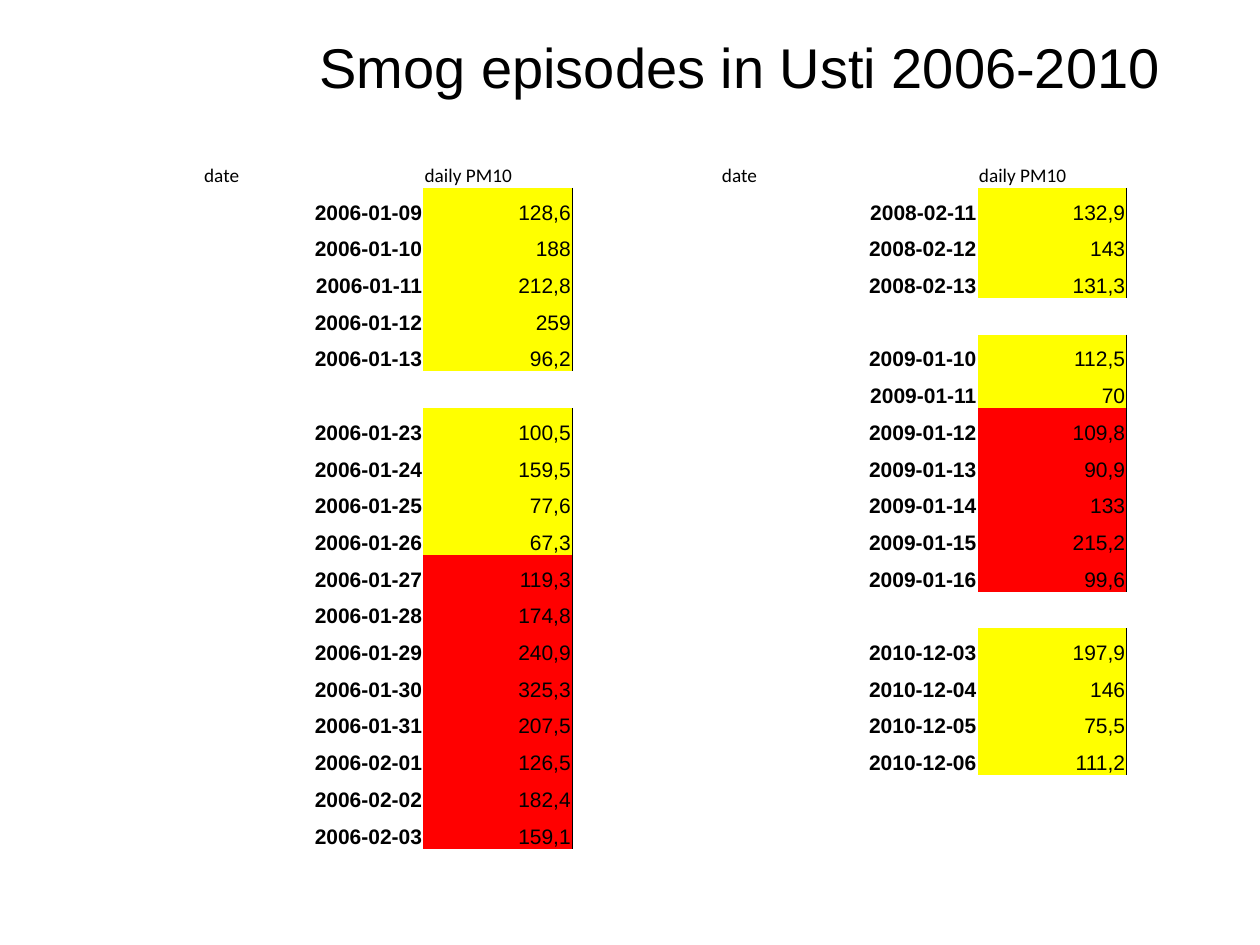
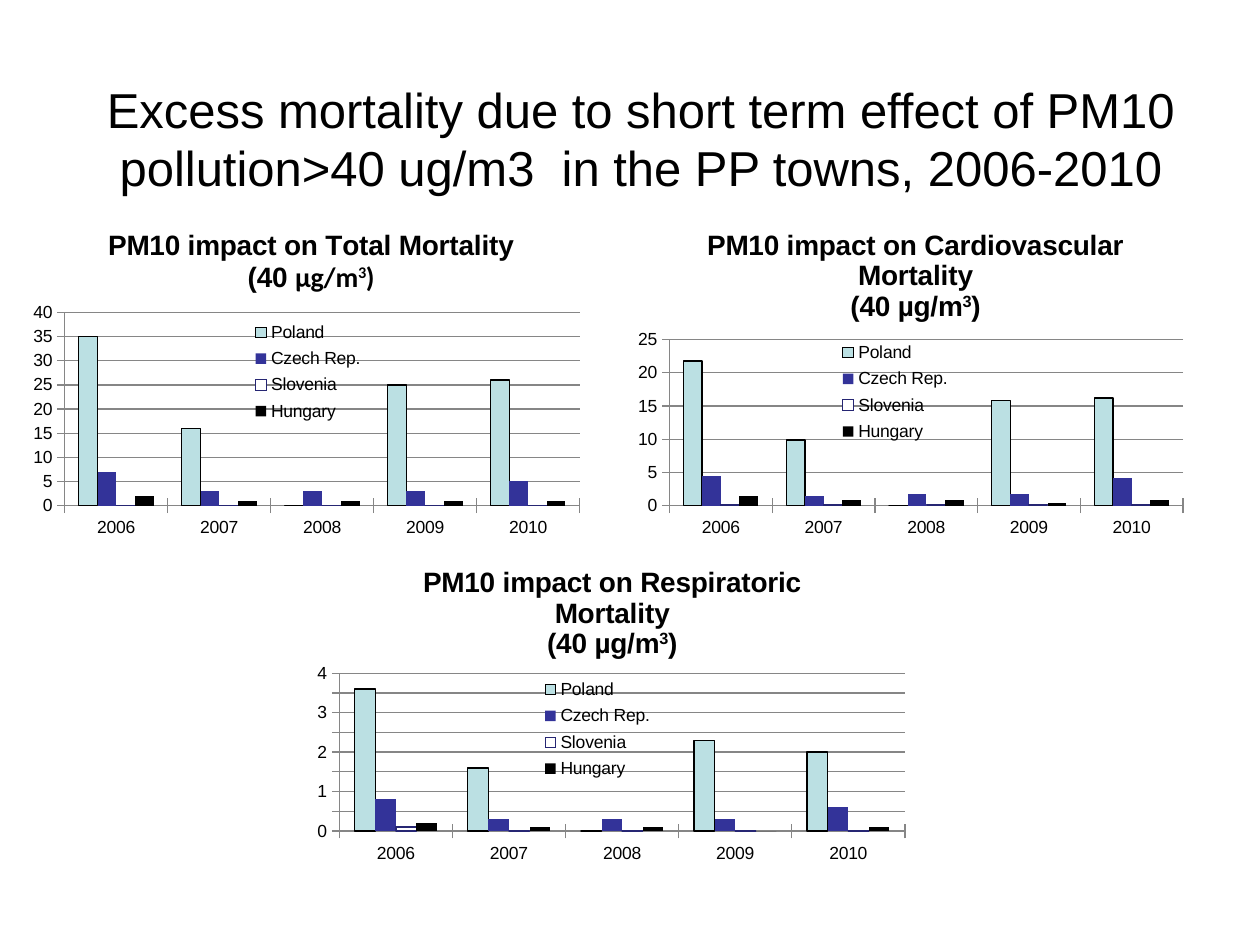
import pptx
import pptx.chart.data
import pptx.dml.color
import pptx.enum.chart
import pptx.enum.text
import pptx.oxml
import pptx.oxml.ns
import pptx.util

Inches, Pt = pptx.util.Inches, pptx.util.Pt
qn = pptx.oxml.ns.qn
ALIGN = pptx.enum.text.PP_ALIGN
ANCHOR = pptx.enum.text.MSO_ANCHOR
LEGEND = pptx.enum.chart.XL_LEGEND_POSITION

COLORS = {
    "text": "000000", "alert": "FFFF00", "alarm": "FF0000", "grid": "868686",
    "Poland": "BBE0E3", "Czech Rep.": "333399", "Slovenia": "FFFFFF", "Hungary": "000000",
    "Slovenia outline": "262673",
}
OUTLINES = {"Poland": "text", "Slovenia": "Slovenia outline"}
TITLE_SIZE = (8.83, 0.63)
NO_STYLE = "{2D5ABB26-0587-4C30-8999-92F81FD0307C}"

SMOG_TITLE = "Smog episodes in Usti 2006-2010"
HEADINGS = {0: "date", 1: "daily PM10", 3: "date", 4: "daily PM10"}
SMOG_COLUMNS = [1.75, 1.18, 1.18, 2.04, 1.18]
HEADING_HEIGHT, TABLE_HEIGHT = 0.5, 5.75
# Each half: (date column, [(first row, [(date, value, level)])])
EPISODES = {
    0: [
        ("2006-01-09", "128,6", "alert"), ("2006-01-10", "188", "alert"),
        ("2006-01-11", "212,8", "alert"), ("2006-01-12", "259", "alert"),
        ("2006-01-13", "96,2", "alert"),
        None,
        ("2006-01-23", "100,5", "alert"), ("2006-01-24", "159,5", "alert"),
        ("2006-01-25", "77,6", "alert"), ("2006-01-26", "67,3", "alert"),
        ("2006-01-27", "119,3", "alarm"), ("2006-01-28", "174,8", "alarm"),
        ("2006-01-29", "240,9", "alarm"), ("2006-01-30", "325,3", "alarm"),
        ("2006-01-31", "207,5", "alarm"), ("2006-02-01", "126,5", "alarm"),
        ("2006-02-02", "182,4", "alarm"), ("2006-02-03", "159,1", "alarm"),
    ],
    3: [
        ("2008-02-11", "132,9", "alert"), ("2008-02-12", "143", "alert"),
        ("2008-02-13", "131,3", "alert"),
        None,
        ("2009-01-10", "112,5", "alert"), ("2009-01-11", "70", "alert"),
        ("2009-01-12", "109,8", "alarm"), ("2009-01-13", "90,9", "alarm"),
        ("2009-01-14", "133", "alarm"), ("2009-01-15", "215,2", "alarm"),
        ("2009-01-16", "99,6", "alarm"),
        None,
        ("2010-12-03", "197,9", "alert"), ("2010-12-04", "146", "alert"),
        ("2010-12-05", "75,5", "alert"), ("2010-12-06", "111,2", "alert"),
    ],
}

MORTALITY_TITLE = ("Excess mortality due to short term effect of PM10 "
                   "pollution>40 ug/m3  in the PP towns, 2006-2010")
YEARS = ["2006", "2007", "2008", "2009", "2010"]
IMPACTS = [
    {
        "title": "PM10 impact on Total Mortality", "unit_font": "Calibri",
        "box": (0.2, 1.62, 4.49, 2.69), "top": 40, "step": 5, "legend_side": LEGEND.LEFT,
        "title_at": (0.14, 0.06), "legend_at": (0.4, 0.33, 0.2, 0.33),
        "plot_at": (0.07, 0.32, 0.91, 0.57),
        "deaths": {"Poland": [35, 16, 0, 25, 26], "Czech Rep.": [7, 3, 3, 3, 5],
                   "Slovenia": [0, 0, 0, 0, 0], "Hungary": [2, 1, 1, 1, 1]},
    },
    {
        "title": "PM10 impact on Cardiovascular Mortality", "unit_font": "Arial",
        "box": (5, 1.62, 4.48, 2.69), "top": 25, "step": 5, "legend_side": LEGEND.LEFT,
        "title_at": (0.13, 0.06), "legend_at": (0.37, 0.39, 0.2, 0.33),
        "plot_at": (0.07, 0.4, 0.91, 0.49),
        "deaths": {"Poland": [21.8, 9.9, 0, 15.8, 16.2], "Czech Rep.": [4.4, 1.5, 1.7, 1.7, 4.1],
                   "Slovenia": [0.2, 0.1, 0.1, 0.2, 0.1], "Hungary": [1.5, 0.8, 0.8, 0.4, 0.8]},
    },
    {
        "title": "PM10 impact on Respiratoric Mortality", "unit_font": "Arial",
        "box": (2.4, 4.3, 4.88, 2.61), "top": 4, "step": 0.5, "legend_side": LEGEND.RIGHT,
        "title_at": (0.19, 0.06), "legend_at": (0.38, 0.4, 0.2, 0.34),
        "plot_at": (0.06, 0.4, 0.92, 0.48),
        "deaths": {"Poland": [3.6, 1.6, 0, 2.3, 2], "Czech Rep.": [0.8, 0.3, 0.3, 0.3, 0.6],
                   "Slovenia": [0.1, 0, 0, 0, 0], "Hungary": [0.2, 0.1, 0.1, 0, 0.1]},
    },
]


def rgb(name):
    return pptx.dml.color.RGBColor.from_string(COLORS[name])


def set_font(font, size, name="Arial", bold=False):
    font.size, font.name, font.bold = Pt(size), name, bold
    font.color.rgb = rgb("text")


def titled_slide(deck, text, left, top, size, bottom_inset=0.05):
    slide = deck.slides.add_slide(deck.slide_layouts[5])
    title = slide.shapes.title
    title.left, title.top = Inches(left), Inches(top)
    title.width, title.height = map(Inches, TITLE_SIZE)
    frame = title.text_frame
    frame.text = text
    frame.auto_size = pptx.enum.text.MSO_AUTO_SIZE.NONE
    frame.vertical_anchor = ANCHOR.MIDDLE
    frame.margin_top, frame.margin_bottom = Inches(0.05), Inches(bottom_inset)
    frame.paragraphs[0].alignment = ALIGN.CENTER
    set_font(frame.paragraphs[0].font, size)
    return slide


def write(cell, text, size, name="Arial", bold=False, align=ALIGN.RIGHT):
    cell.text = text
    paragraph = cell.text_frame.paragraphs[0]
    paragraph.alignment = align
    set_font(paragraph.font, size, name, bold)


def rule_right(cell):
    line = pptx.oxml.parse_xml(
        f'<a:lnR {pptx.oxml.ns.nsdecls("a")} w="6350"><a:solidFill>'
        f'<a:srgbClr val="{COLORS["text"]}"/></a:solidFill></a:lnR>')
    cell._tc.get_or_add_tcPr().insert(0, line)


def add_episodes(slide):
    days = max(map(len, EPISODES.values()))
    frame = slide.shapes.add_table(days + 1, len(SMOG_COLUMNS), Inches(1.61), Inches(0.99),
                                   Inches(sum(SMOG_COLUMNS)), Inches(TABLE_HEIGHT))
    table = frame.table
    table.first_row = table.horz_banding = False
    table._tbl.tblPr.find(qn("a:tableStyleId")).text = NO_STYLE
    for column, width in zip(table.columns, SMOG_COLUMNS):
        column.width = Inches(width)
    for index, row in enumerate(table.rows):
        row.height = Inches((TABLE_HEIGHT - HEADING_HEIGHT) / days if index else HEADING_HEIGHT)
    for cell in table.iter_cells():
        cell.margin_left = cell.margin_right = cell.margin_top = Inches(0.01)
        cell.margin_bottom = 0
        cell.vertical_anchor = ANCHOR.BOTTOM
        cell.fill.background()
        cell.text_frame.paragraphs[0]._p.get_or_add_endParaRPr().set("sz", "1200")
    table.cell(0, 1).merge(table.cell(0, 2))
    for column, heading in HEADINGS.items():
        write(table.cell(0, column), heading, 11, "Calibri", align=ALIGN.LEFT)
    for column, episode_days in EPISODES.items():
        for row, day in enumerate(episode_days, 1):
            if day:
                date, value, level = day
                write(table.cell(row, column), date, 12, bold=True)
                reading = table.cell(row, column + 1)
                write(reading, value, 12)
                rule_right(reading)
                reading.fill.solid()
                reading.fill.fore_color.rgb = rgb(level)


def place(part, index, shares, inner=False):
    for old in part.findall(qn("c:layout")):
        part.remove(old)
    target = '<c:layoutTarget val="inner"/>' if inner else ""
    modes = "".join(f'<c:{side}Mode val="edge"/>' for side in "xy")
    lengths = "".join(f'<c:{side} val="{share}"/>' for side, share in zip("xywh", shares))
    part.insert(index, pptx.oxml.parse_xml(
        f'<c:layout {pptx.oxml.ns.nsdecls("c")}><c:manualLayout>{target}{modes}{lengths}'
        '</c:manualLayout></c:layout>'))


def add_chart_title(chart, impact):
    title = chart.chart_title
    lines = [
        [(impact["title"], "Arial")],
        [("(40 ", "Arial"), ("µg/m", impact["unit_font"]), ("3", impact["unit_font"]),
         (")", impact["unit_font"])],
    ]
    frame = title.text_frame
    for index, line in enumerate(lines):
        paragraph = frame.add_paragraph() if index else frame.paragraphs[0]
        for text, name in line:
            run = paragraph.add_run()
            run.text = text
            set_font(run.font, 16, name, True)
            if text == "3":
                run.font._element.set("baseline", "30000")
    place(title._element, 1, impact["title_at"])
    title._element.find(qn("c:overlay")).set("val", "1")


def add_impact(slide, impact):
    data = pptx.chart.data.CategoryChartData()
    data.categories = YEARS
    for country, deaths in impact["deaths"].items():
        data.add_series(country, deaths)
    chart = slide.shapes.add_chart(pptx.enum.chart.XL_CHART_TYPE.COLUMN_CLUSTERED,
                                   *map(Inches, impact["box"]), data).chart
    set_font(chart.font, 10)
    add_chart_title(chart, impact)
    chart.has_legend = True
    chart.legend.position = impact["legend_side"]
    chart.legend.include_in_layout = True
    set_font(chart.legend.font, 10)
    place(chart.legend._element, 1, impact["legend_at"])
    place(chart._chartSpace.chart.plotArea, 0, impact["plot_at"], inner=True)

    values = chart.value_axis
    values.minimum_scale, values.maximum_scale = 0, impact["top"]
    values.major_unit = impact["step"]
    values.has_major_gridlines = True
    for axis in (chart.category_axis, values):
        axis.major_tick_mark = pptx.enum.chart.XL_TICK_MARK.CROSS
        set_font(axis.tick_labels.font, 10)
    for line in (values.major_gridlines.format.line, values.format.line,
                 chart.category_axis.format.line):
        line.color.rgb, line.width = rgb("grid"), Pt(0.75)

    plot = chart.plots[0]
    plot.gap_width, plot.overlap, plot.vary_by_categories = 150, 0, False
    for series in plot.series:
        series.format.fill.solid()
        series.format.fill.fore_color.rgb = rgb(series.name)
        series.invert_if_negative = False
        if series.name in OUTLINES:
            series.format.line.color.rgb = rgb(OUTLINES[series.name])
            series.format.line.width = Pt(0.75)
        else:
            series.format.line.fill.background()


def main():
    deck = pptx.Presentation()
    deck.slide_width, deck.slide_height = Inches(10), Inches(7.5)
    add_episodes(titled_slide(deck, SMOG_TITLE, 1.46, 0.21, 32))
    mortality = titled_slide(deck, MORTALITY_TITLE, 0.67, 0.99, 28, bottom_inset=0.47)
    for impact in IMPACTS:
        add_impact(mortality, impact)
    deck.save("out.pptx")


if __name__ == "__main__":
    main()
